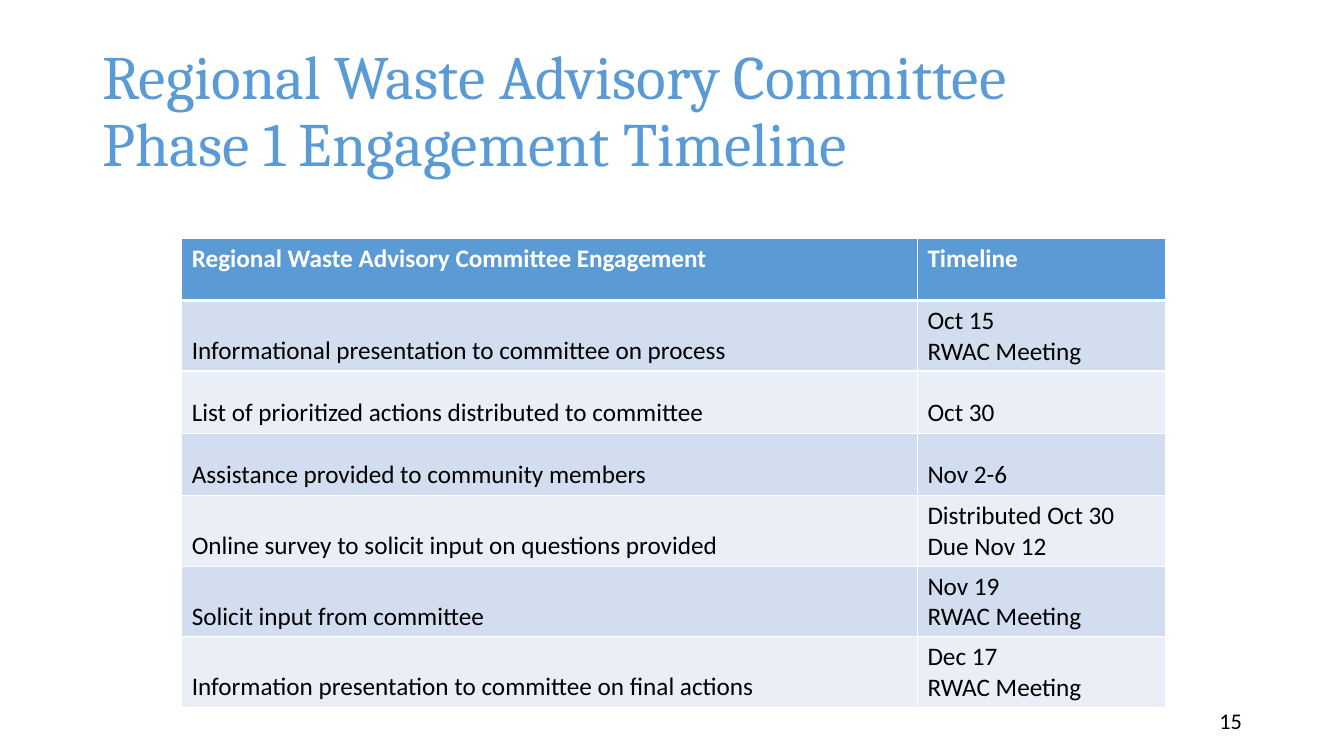
from lxml.etree import SubElement
from pptx import Presentation
from pptx.dml.color import RGBColor
from pptx.enum.text import MSO_ANCHOR as Anchor, PP_ALIGN as Align
from pptx.oxml.ns import qn
from pptx.util import Cm, Pt

COLORS = {
    "blue": "5B9BD5",
    "band_dark": "D2DEEF",
    "band_light": "EAEFF7",
    "white": "FFFFFF",
    "black": "000000",
}


def add_text(paragraph, text, size, color, font="Calibri", bold=False):
    run = paragraph.add_run()
    run.text = text
    run.font.size = Pt(size)
    run.font.name = font
    run.font.bold = bold
    run.font.color.rgb = RGBColor.from_string(COLORS[color])


def style_cell(cell, fill, bottom_width, top_width):
    cell.fill.solid()
    cell.fill.fore_color.rgb = RGBColor.from_string(COLORS[fill])
    properties = cell._tc.get_or_add_tcPr()
    widths = {"lnL": 1, "lnR": 1, "lnT": top_width, "lnB": bottom_width}
    for position, (side, width) in enumerate(widths.items()):
        line = SubElement(properties, qn(f"a:{side}"), w=str(Pt(width)))
        solid = SubElement(line, qn("a:solidFill"))
        SubElement(solid, qn("a:srgbClr"), val=COLORS["white"])
        properties.insert(position, line)


prs = Presentation()
prs.slide_width, prs.slide_height = Cm(33.87), Cm(19.05)
slide = prs.slides.add_slide(prs.slide_layouts[6])

# Title
title = slide.shapes.add_textbox(Cm(2.33), Cm(1.01), Cm(29.21), Cm(3.68)).text_frame
title.word_wrap = True
title.vertical_anchor = Anchor.MIDDLE
heading = title.paragraphs[0]
heading.line_spacing = 0.9
add_text(heading, "Regional Waste Advisory Committee ", 44, "blue", "Cambria")
heading.add_line_break()
add_text(heading, "Phase 1 Engagement Timeline", 44, "blue", "Cambria")

# Engagement timeline: each row holds an activity and the lines of its date
schedule = [
    ("Regional Waste Advisory Committee Engagement", ["Timeline"]),
    ("Informational presentation to committee on process", ["Oct 15", "RWAC Meeting"]),
    ("List of prioritized actions distributed to committee", ["Oct 30"]),
    ("Assistance provided to community members", ["Nov 2-6"]),
    ("Online survey to solicit input on questions provided",
     ["Distributed Oct 30", "Due Nov 12"]),
    ("Solicit input from committee", ["Nov 19", "RWAC Meeting"]),
    ("Information presentation to committee on final actions",
     ["Dec 17", "RWAC Meeting"]),
]
row_height = Cm(1.57)
timeline = slide.shapes.add_table(
    len(schedule), 2, Cm(4.58), Cm(6), Cm(24.79), row_height * len(schedule)).table
timeline.columns[0].width = Cm(18.54)
timeline.columns[1].width = Cm(6.25)

for row, (activity, dates) in enumerate(schedule):
    timeline.rows[row].height = row_height
    is_header = row == 0
    band = "band_dark" if row % 2 else "band_light"
    for column, lines in enumerate([[activity], dates]):
        cell = timeline.cell(row, column)
        style_cell(cell, "blue" if is_header else band,
                   bottom_width=3 if is_header else 1,
                   top_width=3 if row == 1 else 1)
        cell.vertical_anchor = Anchor.TOP if is_header else Anchor.BOTTOM
        for number, line in enumerate(lines):
            frame = cell.text_frame
            paragraph = frame.add_paragraph() if number else frame.paragraphs[0]
            add_text(paragraph, line, 18, "white" if is_header else "black",
                     bold=is_header)

# Slide number
page = slide.shapes.add_textbox(Cm(23.93), Cm(17.65), Cm(7.62), Cm(1.02)).text_frame
page.word_wrap = True
page.vertical_anchor = Anchor.MIDDLE
page.paragraphs[0].alignment = Align.RIGHT
add_text(page.paragraphs[0], "15", 16, "black")

prs.save("out.pptx")
